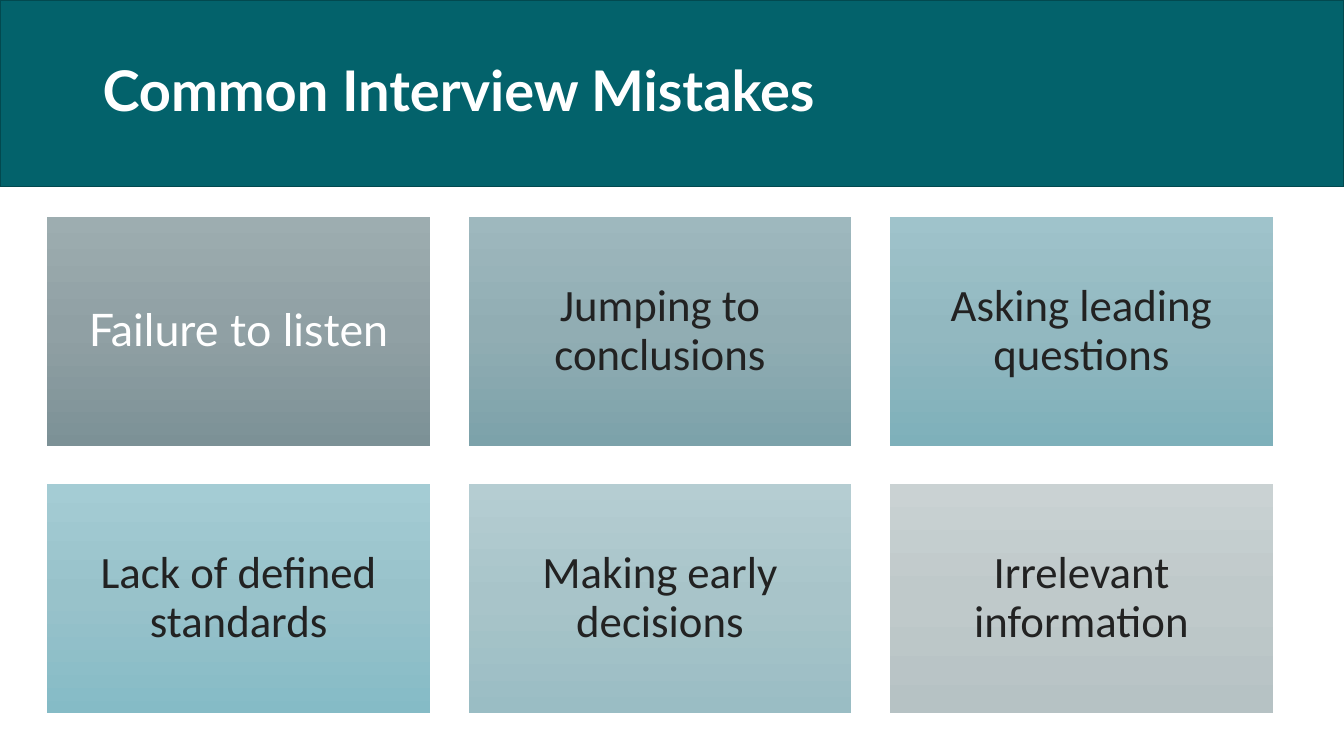
from copy import deepcopy
from pptx import Presentation
from pptx.dml.color import RGBColor
from pptx.enum.shapes import MSO_SHAPE
from pptx.enum.text import MSO_ANCHOR, MSO_AUTO_SIZE, PP_ALIGN
from pptx.oxml.ns import qn
from pptx.util import Cm, Pt

WHITE = RGBColor(0xFF, 0xFF, 0xFF)
DARK = RGBColor(0x22, 0x22, 0x22)
TEAL = RGBColor(0x03, 0x62, 0x6B)
EDGE = RGBColor(0x02, 0x49, 0x4F)

TITLE = "Common Interview Mistakes"
TILES = [
    ("Failure to listen", "Lato", WHITE, ("9DADB0", "90A0A4", "7C9196")),
    ("Jumping to conclusions", "Calibri", DARK, ("9EB8BE", "91ADB3", "7CA2AA")),
    ("Asking leading questions", "Calibri", DARK, ("9FC3CB", "92B8C0", "7EB0BA")),
    ("Lack of defined standards", "Calibri", DARK, ("A4CCD4", "98C2CA", "85BBC6")),
    ("Making early decisions", "Calibri", DARK, ("B5CDD2", "A8C4C9", "9ABDC4")),
    ("Irrelevant information", "Calibri", DARK, ("CAD2D3", "BFC9CA", "B6C2C4")),
]
COLS = 3
LEFT, TOP = 1.19, 5.46
WIDE, HIGH = 9.65, 5.79
GAP_X, GAP_Y = 0.97, 0.94


def style(frame, align, name, size, color, bold=False):
    frame.word_wrap = True
    frame.auto_size = MSO_AUTO_SIZE.NONE
    frame.vertical_anchor = MSO_ANCHOR.MIDDLE
    para = frame.paragraphs[0]
    para.alignment = align
    para.line_spacing = 0.9
    font = para.runs[0].font
    font.name, font.size, font.bold = name, Pt(size), bold
    font.color.rgb = color


def add_box(slide, left, top, wide, high):
    box = slide.shapes.add_shape(
        MSO_SHAPE.RECTANGLE, Cm(left), Cm(top), Cm(wide), Cm(high))
    box.shadow.inherit = False
    return box


def shade(box, tones):
    box.fill.gradient()
    box.fill.gradient_angle = 270
    stops = box.element.find(".//" + qn("a:gsLst"))
    stops.append(deepcopy(stops[-1]))
    for stop, tone, place in zip(box.fill.gradient_stops, tones, (0, 0.5, 1)):
        stop.color.rgb = RGBColor.from_string(tone)
        stop.position = place


def add_head(slide):
    title = slide.shapes.title
    title.left, title.top = Cm(2.33), Cm(0.51)
    title.width, title.height = Cm(29.21), Cm(3.68)
    title.text_frame.text = TITLE
    style(title.text_frame, PP_ALIGN.LEFT, "Lato", 40, WHITE, True)
    band = add_box(slide, 0, 0, 33.87, 4.7)
    band.fill.solid()
    band.fill.fore_color.rgb = TEAL
    band.line.color.rgb = EDGE
    band.line.width = Pt(1)
    title.element.addprevious(band.element)


def add_tile(slide, index, text, name, color, tones):
    row, col = divmod(index, COLS)
    tile = add_box(slide, LEFT + col * (WIDE + GAP_X),
                   TOP + row * (HIGH + GAP_Y), WIDE, HIGH)
    shade(tile, tones)
    tile.line.fill.background()
    frame = tile.text_frame
    frame.margin_left = frame.margin_right = Cm(0.33)
    frame.margin_top = frame.margin_bottom = Cm(0.33)
    frame.text = text
    style(frame, PP_ALIGN.CENTER, name, 32, color)


def main():
    deck = Presentation()
    deck.slide_width, deck.slide_height = Cm(33.87), Cm(19.05)
    slide = deck.slides.add_slide(deck.slide_layouts[5])
    add_head(slide)
    for index, tile in enumerate(TILES):
        add_tile(slide, index, *tile)
    deck.save("out.pptx")


if __name__ == "__main__":
    main()
